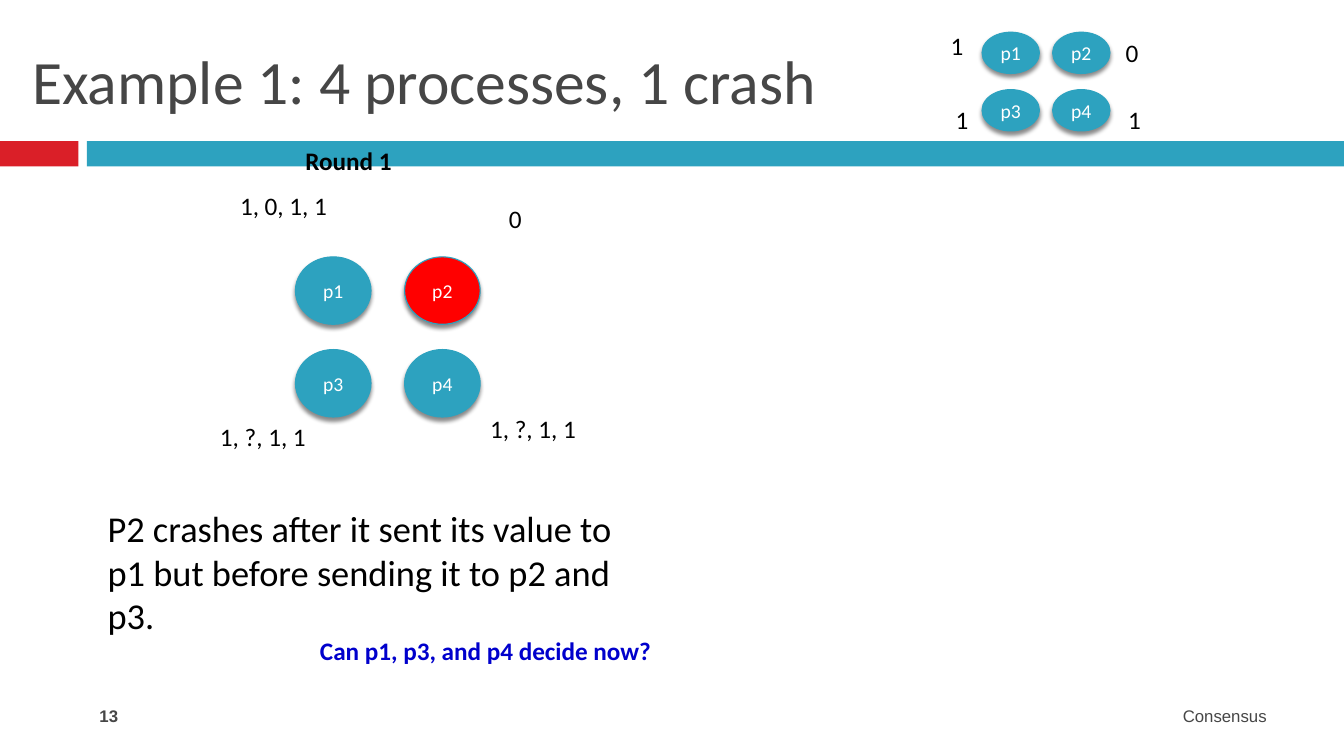
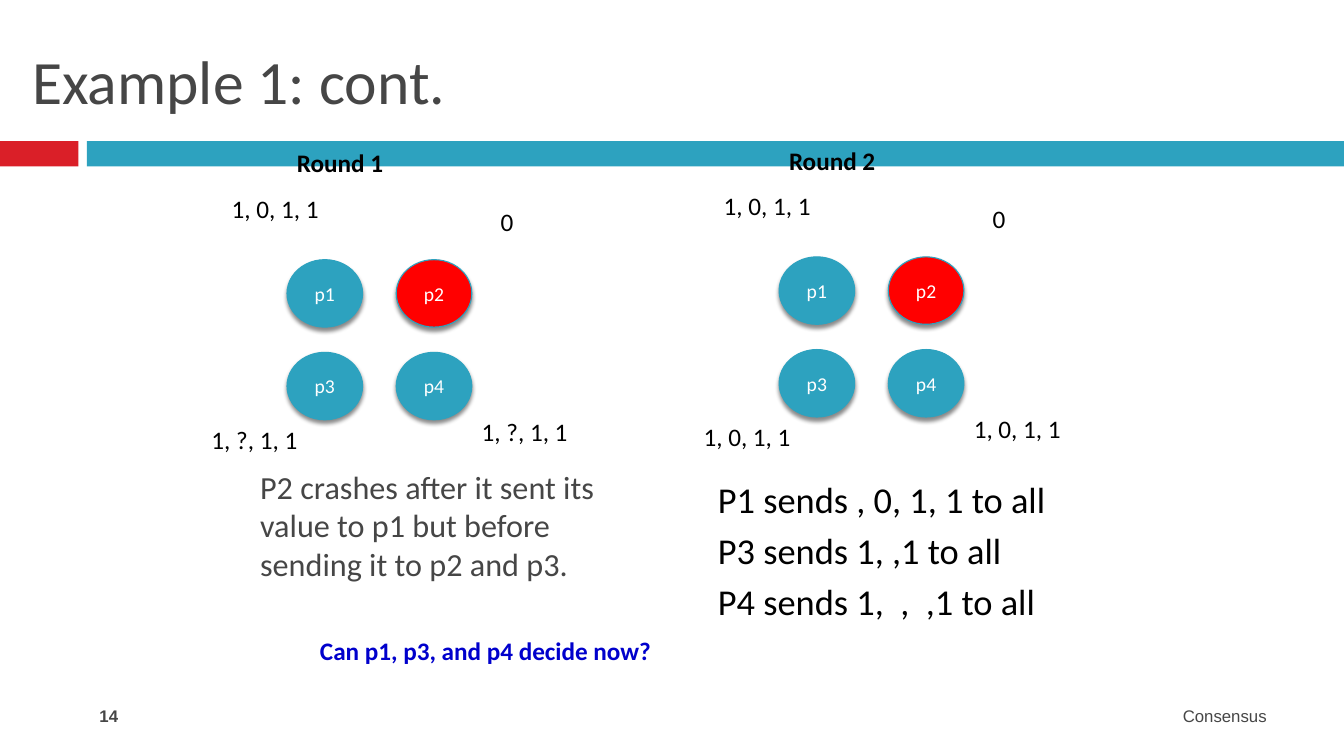
from lxml.etree import SubElement
from pptx import Presentation
from pptx.dml.color import RGBColor
from pptx.enum.shapes import MSO_SHAPE
from pptx.enum.text import MSO_ANCHOR, PP_ALIGN
from pptx.oxml.ns import qn
from pptx.util import Pt

TEAL, RED, CRASHED = "2DA2BF", "DA1F28", "FF0000"
GREY, BLACK, WHITE, BLUE = "464646", "000000", "FFFFFF", "0000CC"
PROCESSES = ["p1", "p2", "p3", "p4"]
INDENT = 21.6

TITLE = {"size": Pt(44), "name": "Calibri"}
BODY = {"size": Pt(26), "name": "Calibri"}
SIDE_BODY = {"size": Pt(23), "name": "Calibri"}
LABEL = {"size": Pt(18), "name": "Calibri"}
BOLD_LABEL = {**LABEL, "bold": True}
NODE = {"size": Pt(14), "name": "Calibri"}
FOOTER = {"size": Pt(12), "name": "Arial"}
PAGE = {**FOOTER, "bold": True}

CRASH_TEXT = ("P2 crashes after it sent its value to p1 "
              "but before sending it to p2 and p3.")
QUESTION = "Can p1, p3, and p4 decide now?"
AFTER_ROUND_1 = ["1, 0, 1, 1", "0", "1, ?, 1, 1", "1, ?, 1, 1"]
AFTER_ROUND_2 = ["1, 0, 1, 1", "0", "1, 0, 1, 1", "1, 0, 1, 1"]


def paint(color_format, color):
    color_format.rgb = RGBColor.from_string(color)


def set_attrs(target, values):
    for name, value in values.items():
        setattr(target, name, value)


def write(p, text, style, color):
    r = p.add_run()
    r.text = text
    set_attrs(r.font, style)
    paint(r.font.color, color)


def add_text(s, box, lines, style, color=BLACK, frame=None, para=None):
    tf = s.shapes.add_textbox(*map(Pt, box)).text_frame
    set_attrs(tf, {"word_wrap": True, **(frame or {})})
    for i, line in enumerate(lines):
        p = tf.add_paragraph() if i else tf.paragraphs[0]
        set_attrs(p, para or {})
        write(p, line, style, color)


def add_body(s, box, lines, style, color, space):
    add_text(s, box, lines, style, color,
             {"margin_left": Pt(7.2 + INDENT)}, {"space_before": Pt(space)})


def add_shape(s, kind, box, color):
    sp = s.shapes.add_shape(kind, *map(Pt, box))
    sp.shadow.inherit = False
    sp.fill.solid()
    paint(sp.fill.fore_color, color)
    return sp


def add_process(s, box, name, color):
    sp = add_shape(s, MSO_SHAPE.OVAL, box, color)
    paint(sp.line.color, TEAL)
    sp.line.width = Pt(0.79)
    effects = sp.element.spPr.find(qn("a:effectLst"))
    shadow = SubElement(effects, qn("a:outerShdw"), blurRad=str(Pt(3)),
                        dist=str(Pt(2.4)), dir="5400000", rotWithShape="0")
    shade = SubElement(shadow, qn("a:srgbClr"), val=BLACK)
    SubElement(shade, qn("a:alpha"), val="45000")
    tf = sp.text_frame
    set_attrs(tf, {"word_wrap": False, "vertical_anchor": MSO_ANCHOR.MIDDLE,
                   "margin_left": 0, "margin_right": 0,
                   "margin_top": 0, "margin_bottom": 0})
    tf.paragraphs[0].alignment = PP_ALIGN.CENTER
    write(tf.paragraphs[0], name, NODE, WHITE)


def add_processes(s, x, y, size, pitch, crashed=None):
    for i, name in enumerate(PROCESSES):
        row, col = divmod(i, 2)
        box = (x + col * pitch[0], y + row * pitch[1], *size)
        add_process(s, box, name, CRASHED if name == crashed else TEAL)


def add_values(s, x, y, places, values, width):
    for (dx, dy), value in zip(places, values):
        add_text(s, (x + dx, y + dy, width, 36), [value], LABEL)


def add_start(s, x, y):
    add_processes(s, x + 29.5, y + 5, (41, 29.5), (50.4, 41))
    places = [(0, 0), (125, 5), (3.6, 53.3), (126.7, 53.3)]
    add_values(s, x, y, places, ["1", "0", "1", "1"], 28)


def add_round(s, x, y, number, values):
    add_text(s, (x + 61, y, 112, 36), [f"Round {number}"], BOLD_LABEL)
    add_processes(s, x + 61, y + 83.5, (54, 48.2), (78, 66.2), "p2")
    places = [(14.4, 32.4), (206.5, 41.8), (0, 197.3), (193, 191.5)]
    add_values(s, x, y, places, values, 108)


def add_question(s, x, y):
    add_text(s, (x, y, 385, 36), [QUESTION], BOLD_LABEL, BLUE)


def add_slide(prs, title, page):
    s = prs.slides.add_slide(prs.slide_layouts[6])
    for x, width, color in [(0, 56, RED), (62, 898, TEAL)]:
        band = add_shape(s, MSO_SHAPE.RECTANGLE, (x, 100.8, width, 18), color)
        band.line.fill.background()
    add_text(s, (16, 18, 928, 78), [title], TITLE, GREY,
             {"vertical_anchor": MSO_ANCHOR.MIDDLE})
    add_text(s, (544, 500.4, 368, 29), ["Consensus"], FOOTER, GREY,
             para={"alignment": PP_ALIGN.RIGHT})
    add_text(s, (64, 500.4, 208, 29), [str(page)], PAGE, GREY)
    return s


def build_crash_slide(prs):
    s = add_slide(prs, "Example 1: 4 processes, 1 crash", 13)
    add_body(s, (48, 358, 403, 127), [CRASH_TEXT], BODY, BLACK, 5.5)
    add_start(s, 672, 18)
    add_round(s, 150, 100, 1, AFTER_ROUND_1)
    add_question(s, 221.5, 450)


def build_rounds_slide(prs):
    s = add_slide(prs, "Example 1: cont.", 14)
    add_body(s, (484, 337, 428, 148),
             ["P1 sends , 0, 1, 1 to all", "P3 sends 1, ,1 to all",
              "P4 sends 1,  ,  ,1 to all"], BODY, BLACK, 5.5)
    add_round(s, 495.5, 100, 2, AFTER_ROUND_2)
    add_question(s, 221.5, 450)
    add_body(s, (157, 330, 276, 104), [CRASH_TEXT], SIDE_BODY, GREY, 5)
    add_round(s, 144, 102, 1, AFTER_ROUND_1)


def main():
    prs = Presentation()
    set_attrs(prs, {"slide_width": Pt(960), "slide_height": Pt(540)})
    build_crash_slide(prs)
    build_rounds_slide(prs)
    prs.save("out.pptx")


if __name__ == "__main__":
    main()
